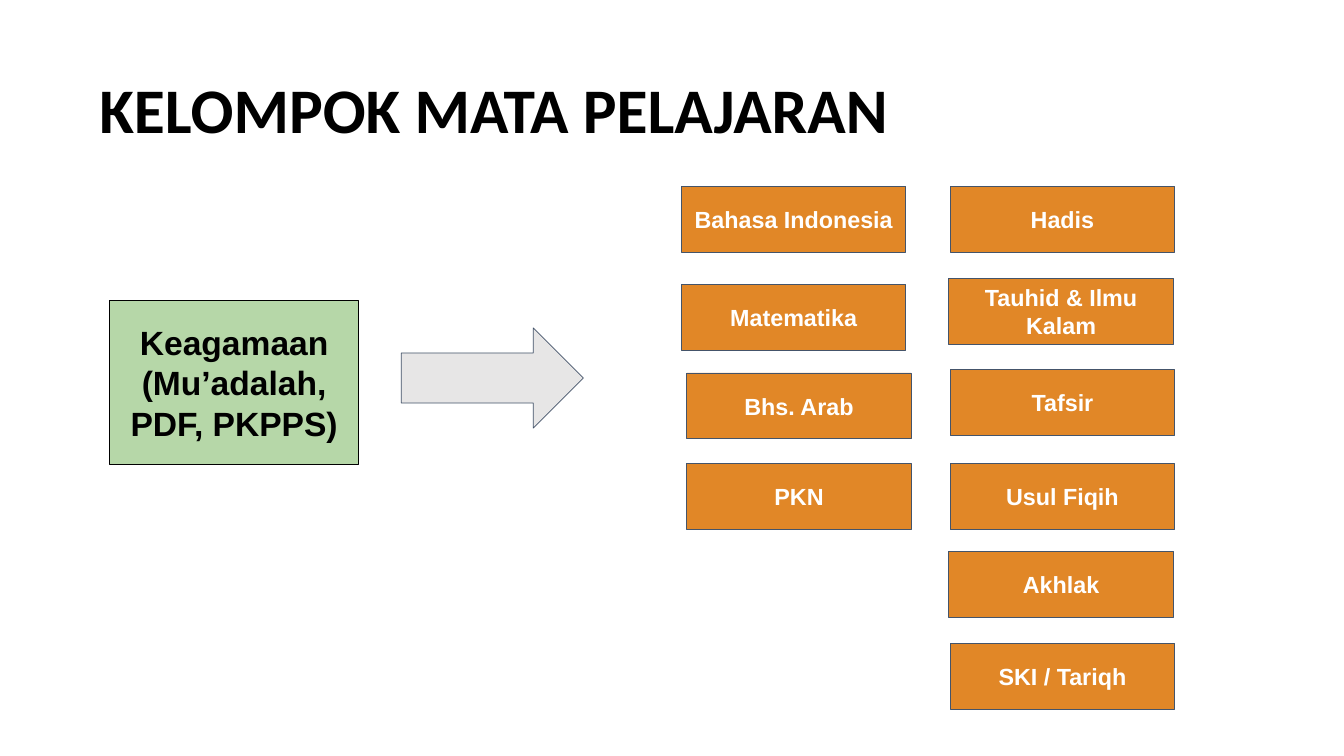
from dataclasses import dataclass

import pptx
import pptx.dml.color
import pptx.enum.shapes
import pptx.enum.text
import pptx.util

Inches = pptx.util.Inches
Pt = pptx.util.Pt
Shapes = pptx.enum.shapes.MSO_SHAPE
Align = pptx.enum.text.PP_ALIGN

SUBJECT_WIDTH, SUBJECT_HEIGHT = 3.34, 0.98


@dataclass(frozen=True)
class Style:
    size: float
    color: str
    font: str = "Arial"
    align: Align = Align.CENTER
    margin: float = 0.1
    spacing: float = 1.0


@dataclass(frozen=True)
class Subject:
    name: str
    left: float
    top: float


TITLE = Style(68, "000000", "Calibri", Align.LEFT, 0.05, 0.9)
GROUP = Style(36, "000000")
SUBJECT = Style(25, "FFFFFF")

SUBJECTS = [
    Subject("Bahasa Indonesia", 10.14, 2.77),
    Subject("Matematika", 10.14, 4.23),
    Subject("Bhs. Arab", 10.22, 5.55),
    Subject("PKN", 10.22, 6.9),
    Subject("Hadis", 14.14, 2.77),
    Subject("Tauhid & Ilmu Kalam", 14.12, 4.14),
    Subject("Tafsir", 14.14, 5.5),
    Subject("Usul Fiqih", 14.14, 6.9),
    Subject("Akhlak", 14.12, 8.2),
    Subject("SKI / Tariqh", 14.14, 9.57),
]


def rgb(code: str) -> pptx.dml.color.RGBColor:
    return pptx.dml.color.RGBColor.from_string(code)


def write(shape, lines: list[str], style: Style) -> None:
    frame = shape.text_frame
    frame.word_wrap = True
    frame.vertical_anchor = pptx.enum.text.MSO_ANCHOR.MIDDLE
    frame.margin_left = frame.margin_right = Inches(0.1)
    frame.margin_top = frame.margin_bottom = Inches(style.margin)
    for index, line in enumerate(lines):
        paragraph = frame.add_paragraph() if index else frame.paragraphs[0]
        paragraph.alignment = style.align
        paragraph.line_spacing = style.spacing
        run = paragraph.add_run()
        run.text = line
        run.font.name = style.font
        run.font.size = Pt(style.size)
        run.font.bold = True
        run.font.color.rgb = rgb(style.color)


def add_block(slide, kind: Shapes, left: float, top: float, width: float,
              height: float, fill: str, line: str = "44546A"):
    block = slide.shapes.add_shape(
        kind, Inches(left), Inches(top), Inches(width), Inches(height))
    block.shadow.inherit = False
    block.fill.solid()
    block.fill.fore_color.rgb = rgb(fill)
    block.line.color.rgb = rgb(line)
    block.line.width = Pt(0.75)
    return block


def main() -> None:
    deck = pptx.Presentation()
    deck.slide_width, deck.slide_height = Inches(20), Inches(11.25)
    slide = deck.slides.add_slide(deck.slide_layouts[6])

    title = slide.shapes.add_textbox(
        Inches(1.38), Inches(0.6), Inches(17.25), Inches(2.17))
    write(title, ["KELOMPOK MATA PELAJARAN"], TITLE)

    religious = add_block(
        slide, Shapes.RECTANGLE, 1.63, 4.47, 3.71, 2.44, "B6D7A8", "000000")
    write(religious, ["Keagamaan", "(Mu’adalah, PDF, PKPPS)"], GROUP)

    add_block(slide, Shapes.RIGHT_ARROW, 5.97, 4.88, 2.71, 1.49, "E7E6E6")

    for subject in SUBJECTS:
        block = add_block(slide, Shapes.RECTANGLE, subject.left, subject.top,
                          SUBJECT_WIDTH, SUBJECT_HEIGHT, "E18727")
        write(block, [subject.name], SUBJECT)

    deck.save("out.pptx")


if __name__ == "__main__":
    main()
